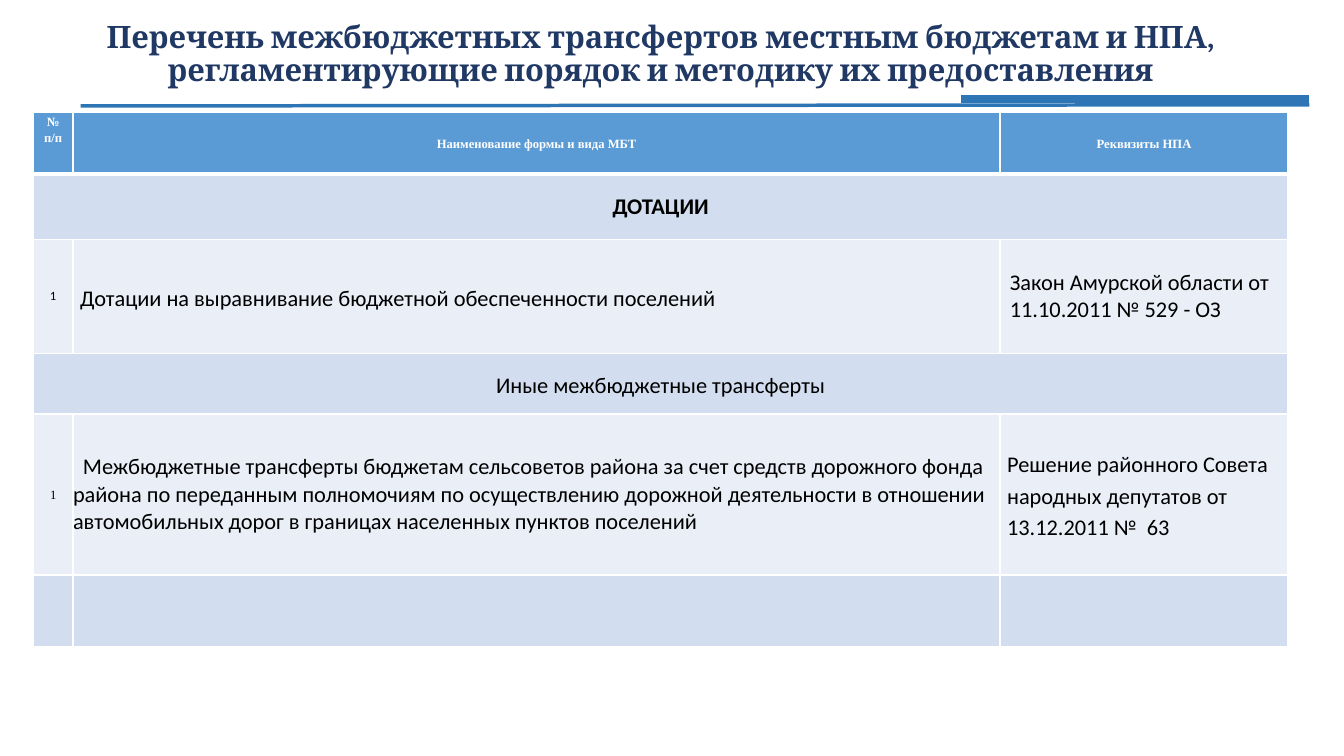
from dataclasses import dataclass

from lxml import etree
from pptx import Presentation
from pptx.dml.color import RGBColor
from pptx.enum.shapes import MSO_CONNECTOR
from pptx.enum.text import MSO_ANCHOR, MSO_AUTO_SIZE, PP_ALIGN
from pptx.oxml.ns import qn
from pptx.util import Cm, Pt

CENTER, LEFT, JUSTIFY = PP_ALIGN.CENTER, PP_ALIGN.LEFT, PP_ALIGN.JUSTIFY
TOP, MIDDLE = MSO_ANCHOR.TOP, MSO_ANCHOR.MIDDLE
STRAIGHT = MSO_CONNECTOR.STRAIGHT

# Content
TITLE = ("Перечень межбюджетных трансфертов местным бюджетам и НПА, "
         "регламентирующие порядок и методику их предоставления")
HEADERS = ["№ п/п", "Наименование формы и вида МБТ", "Реквизиты НПА"]
GRANTS = "ДОТАЦИИ"
GRANT_ROW = ["1", "Дотации на выравнивание бюджетной обеспеченности поселений",
             "Закон Амурской области от 11.10.2011 № 529 - ОЗ"]
OTHER = "Иные межбюджетные трансферты"
OTHER_ROW = ["1",
             "Межбюджетные трансферты бюджетам сельсоветов района за счет средств "
             "дорожного фонда района по переданным полномочиям по осуществлению "
             "дорожной деятельности в отношении автомобильных дорог в границах "
             "населенных пунктов поселений",
             "Решение районного Совета народных депутатов от 13.12.2011 №  63"]

# Layout in centimetres
LEFT_EDGE, TABLE_TOP = 0.84, 2.84
COL_WIDTHS = [1, 23.36, 7.26]
ROW_HEIGHTS = [1.55, 1.65, 2.87, 1.52, 4.06, 1.8]
TABLE_WIDTH = sum(COL_WIDTHS)
RULES = [((2.03, 2.67), (33, 2.64), 2.5), ((24.23, 2.49), (33, 2.49), 6)]
TIGHT, LOOSE, FLUSH = (0.18, 0), (0.25, 0.13), (0, 0)  # side and top cell margins


@dataclass(frozen=True)
class Theme:
    title: RGBColor = RGBColor(0x20, 0x38, 0x64)
    rule: RGBColor = RGBColor(0x2E, 0x75, 0xB6)
    header: RGBColor = RGBColor(0x5B, 0x9B, 0xD5)
    band: RGBColor = RGBColor(0xD2, 0xDE, 0xEF)
    pale: RGBColor = RGBColor(0xEA, 0xEF, 0xF7)
    white: RGBColor = RGBColor(0xFF, 0xFF, 0xFF)
    black: RGBColor = RGBColor(0, 0, 0)
    title_font: str = "Cambria"
    body_font: str = "Calibri"
    small_font: str = "Times New Roman"
    title_size: int = 22
    body_size: int = 16
    small_size: int = 9


T = Theme()


def style(p, font, size, color, bold=False):
    p.font.name, p.font.size, p.font.bold = font, Pt(size), bold
    p.font.color.rgb = color


def paint(cell, fill, top=1, bottom=1):
    """White borders of the given widths, then the fill."""
    tcPr = cell._tc.get_or_add_tcPr()
    for tag, width in (("lnL", 1), ("lnR", 1), ("lnT", top), ("lnB", bottom)):
        ln = etree.SubElement(tcPr, qn("a:" + tag), w=str(Pt(width)))
        solid = etree.SubElement(ln, qn("a:solidFill"))
        etree.SubElement(solid, qn("a:srgbClr"), val=str(T.white))
    cell.fill.solid()
    cell.fill.fore_color.rgb = fill


def write(cell, text, align=CENTER, margins=TIGHT, spaced=True, anchor=MIDDLE,
          font=T.body_font, size=T.body_size, color=T.black, bold=False):
    side, top = margins
    cell.margin_left = cell.margin_right = Cm(side)
    cell.margin_top = cell.margin_bottom = Cm(top)
    cell.vertical_anchor = anchor
    p = cell.text_frame.paragraphs[0]
    p.text, p.alignment = text, align
    if spaced:
        p.line_spacing, p.space_after = 1.15, Pt(10)
    style(p, font, size, color, bold)
    return p


prs = Presentation()
prs.slide_width, prs.slide_height = Cm(33.87), Cm(19.05)
s = prs.slides.add_slide(prs.slide_layouts[5])

# Title
title = s.shapes.title
title.left, title.top, title.width, title.height = map(
    Cm, (LEFT_EDGE, 0.69, TABLE_WIDTH, 1.4))
tf = title.text_frame
tf.text, tf.word_wrap, tf.auto_size = TITLE, True, MSO_AUTO_SIZE.NONE
tf.vertical_anchor = MIDDLE
p = tf.paragraphs[0]
p.alignment, p.line_spacing = CENTER, 0.9
style(p, T.title_font, T.title_size, T.title, True)

# Table grid
table = s.shapes.add_table(
    len(ROW_HEIGHTS), len(COL_WIDTHS), Cm(LEFT_EDGE), Cm(TABLE_TOP),
    Cm(TABLE_WIDTH), Cm(sum(ROW_HEIGHTS))).table
for column, width in zip(table.columns, COL_WIDTHS):
    column.width = Cm(width)
for i, (row, height) in enumerate(zip(table.rows, ROW_HEIGHTS)):
    row.height = Cm(height)
    fill = T.header if i == 0 else T.band if i % 2 else T.pale
    for cell in row.cells:
        paint(cell, fill, top=3 if i == 1 else 1, bottom=3 if i == 0 else 1)

# Header row
for j, text in enumerate(HEADERS):
    write(table.cell(0, j), text, anchor=MIDDLE if j else TOP,
          font=T.small_font, size=T.small_size, color=T.white, bold=True)

# Section rows
for i in (1, 3):
    table.cell(i, 0).merge(table.cell(i, 2))
write(table.cell(1, 0), GRANTS, margins=LOOSE, spaced=False, bold=True)
write(table.cell(3, 0), OTHER)

# Grant row
number, name, act = GRANT_ROW
write(table.cell(2, 0), number, margins=LOOSE, spaced=False, size=T.small_size)
write(table.cell(2, 1), name, JUSTIFY)
write(table.cell(2, 2), act, LEFT, LOOSE, spaced=False)

# Other transfers row
number, name, act = OTHER_ROW
write(table.cell(4, 0), number, font=T.small_font, size=T.small_size)
p = write(table.cell(4, 1), name, LEFT, FLUSH, spaced=False)
p._p.get_or_add_pPr().set("indent", str(Cm(0.25)))
write(table.cell(4, 2), act, LEFT)

# Rules under the title
for start, end, width in RULES:
    rule = s.shapes.add_connector(STRAIGHT, *map(Cm, start + end))
    rule.line.color.rgb, rule.line.width = T.rule, Pt(width)
    etree.SubElement(rule._element.spPr, qn("a:effectLst"))

prs.save("out.pptx")
